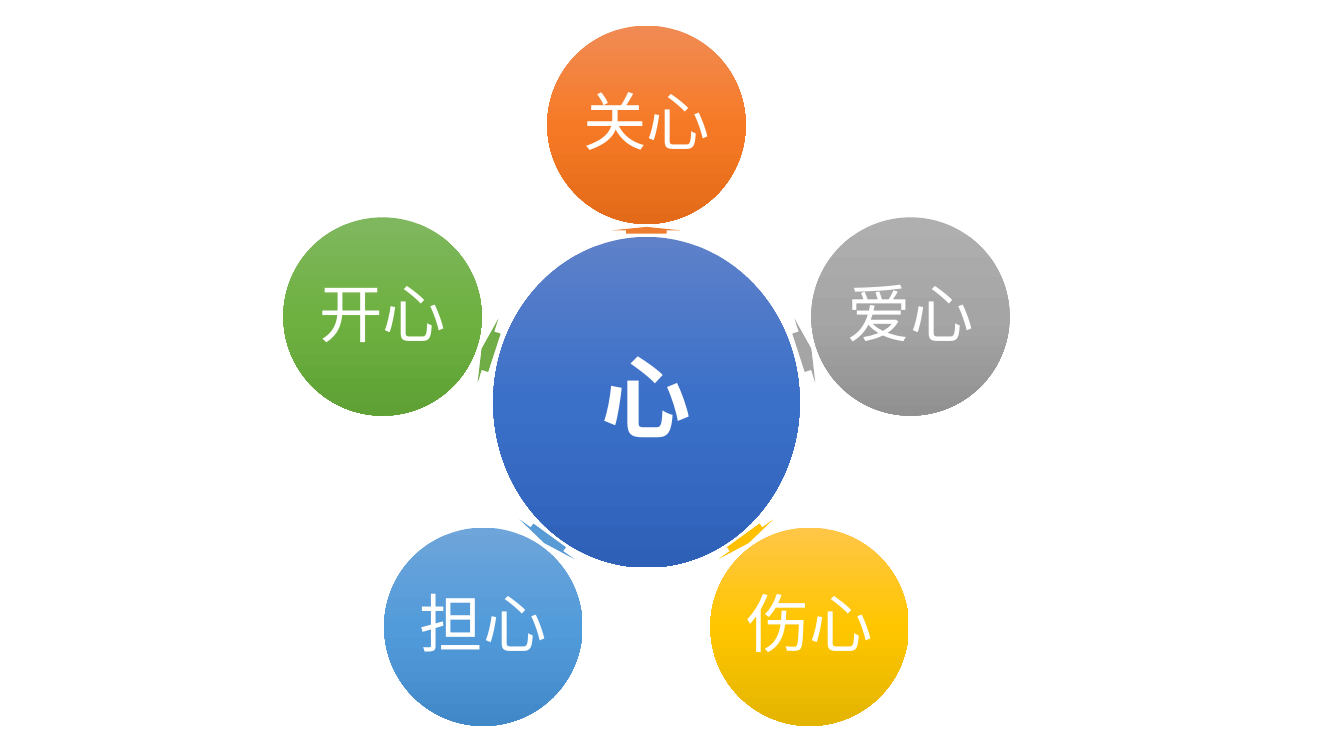
from copy import deepcopy
from dataclasses import dataclass
from math import cos, radians, sin

from pptx import Presentation
from pptx.dml.color import RGBColor
from pptx.enum.shapes import MSO_SHAPE
from pptx.enum.text import MSO_ANCHOR, PP_ALIGN
from pptx.util import Inches, Pt


@dataclass(frozen=True)
class Theme:
    """Colours, fonts and type sizes of the slide."""
    text: str = "FFFFFF"
    blue: tuple = ("5E81C9", "3B70C9", "2E60B8")
    orange: tuple = ("F08B54", "F67A26", "E36A18")
    grey: tuple = ("AFAFAF", "A5A5A5", "919191")
    gold: tuple = ("FFC647", "FFC600", "E3B400")
    sky: tuple = ("6EA5DA", "529BDA", "4188C8")
    green: tuple = ("7FB75F", "6EB141", "5FA134")
    arrows: tuple = ("ED7D31", "A5A5A5", "FFC000", "599BD5", "70AD47")
    hub_font: tuple = (("name", "Arial"), ("size", Pt(48)), ("bold", True))
    petal_font: tuple = (("name", "Calibri"), ("size", Pt(34)), ("bold", False))


class RadialSlide:
    """Draws on one slide with a square grid of 100 columns."""

    def __init__(self, deck, theme):
        """Start a blank slide in the deck."""
        self.theme = theme
        self.cell = deck.slide_width / 100
        self.slide = deck.slides.add_slide(deck.slide_layouts[6])

    def place(self, preset, centre, width, height):
        """Add a plain preset shape around a centre point."""
        column, row = centre
        box = (column - width / 2, row - height / 2, width, height)
        shape = self.slide.shapes.add_shape(preset, *(round(v * self.cell) for v in box))
        shape.shadow.inherit = False
        shape.line.fill.background()
        return shape

    def circle(self, label, centre, width, height, shades, font, inset):
        """Add a labelled ellipse with a downward gradient of three shades."""
        ellipse = self.place(MSO_SHAPE.OVAL, centre, width, height)
        fill = ellipse.fill
        fill.gradient()
        fill.gradient_angle = 270
        first = fill._fill._gradFill.gsLst[0]
        first.addnext(deepcopy(first))
        for stop, shade, position in zip(fill.gradient_stops, shades, (0, 0.5, 1)):
            stop.color.rgb = RGBColor.from_string(shade)
            stop.position = position
        frame = ellipse.text_frame
        margins = {f"margin_{side}": Inches(inset) for side in ("left", "top", "right", "bottom")}
        for name, value in {"word_wrap": True, "vertical_anchor": MSO_ANCHOR.MIDDLE, **margins}.items():
            setattr(frame, name, value)
        paragraph = frame.paragraphs[0]
        for name, value in {"alignment": PP_ALIGN.CENTER, "line_spacing": 0.9}.items():
            setattr(paragraph, name, value)
        run = paragraph.add_run()
        run.text = label
        for name, value in dict(font).items():
            setattr(run.font, name, value)
        run.font.color.rgb = RGBColor.from_string(self.theme.text)

    def arrow(self, centre, length, bearing, colour):
        """Add a short block arrow that points along a bearing from the top."""
        pointer = self.place(MSO_SHAPE.RIGHT_ARROW, centre, length, 5)
        pointer.rotation = (bearing - 90) % 360
        pointer.adjustments[0], pointer.adjustments[1] = 0.6, 0.5
        pointer.fill.solid()
        pointer.fill.fore_color.rgb = RGBColor.from_string(colour)


def orbit(hub, radius, bearing):
    """Return the point at a radius and clockwise bearing from the hub."""
    angle = radians(bearing)
    return hub[0] + radius * sin(angle), hub[1] - radius * cos(angle)


def main():
    """Build and save the radial diagram."""
    deck = Presentation()
    deck.slide_width = Inches(10)
    deck.slide_height = deck.slide_width * 9 // 16
    theme = Theme()
    diagram = RadialSlide(deck, theme)
    hub = (48.1, 29.93)
    diagram.circle("心", hub, 22.8, 24.6, theme.blue, theme.hub_font, 0.07)
    petals = (
        ("关心", theme.orange, 12.8, 0.5),
        ("爱心", theme.grey, 12.4, 1),
        ("伤心", theme.gold, 12.6, 0.7),
        ("担心", theme.sky, 12.6, 0.7),
        ("开心", theme.green, 12.4, 1),
    )
    for index, (label, shades, reach, length) in enumerate(petals):
        bearing = index * 360 / len(petals)
        diagram.arrow(orbit(hub, reach, bearing), length, bearing, theme.arrows[index])
        diagram.circle(label, orbit(hub, 20.65, bearing), 14.75, 14.75, shades, theme.petal_font, 0.03)
    deck.save("out.pptx")


if __name__ == "__main__":
    main()
